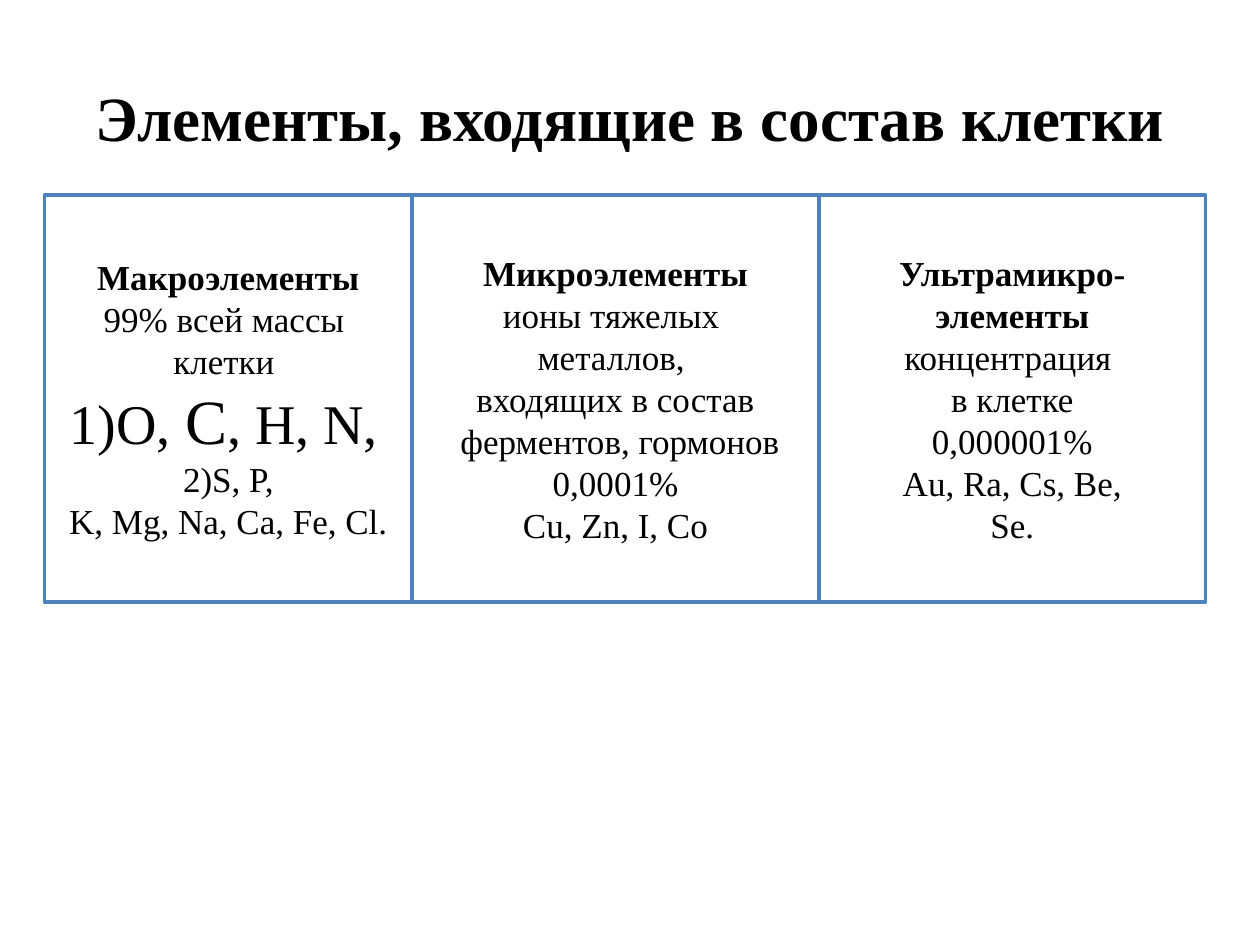
"""Build a slide on the chemical elements that make up a cell."""
from dataclasses import dataclass

from pptx import Presentation
from pptx import util as u
from pptx.dml import color
from pptx.enum import shapes, text


@dataclass(frozen=True)
class Theme:
    font: str = "Times New Roman"
    ink: color.RGBColor = color.RGBColor(0, 0, 0)
    panel: color.RGBColor = color.RGBColor(255, 255, 255)
    border: color.RGBColor = color.RGBColor(0x4F, 0x81, 0xBD)
    title: int = 36
    formula: int = 32
    body: int = 20


THEME = Theme()
PANEL_LEFT, PANEL_TOP, PANEL_HEIGHT = 25.5, 111.5, 232.5

PANELS = [
    (210, ["Макроэлементы"], [
        "99% всей массы ",
        "клетки ",
        [("1)О, ", THEME.formula), ("С", THEME.title),
         (", H, N,", THEME.formula), (" ", THEME.body)],
        "2)S, P,",
        "K, Mg, Na, Ca, Fe, Cl.",
    ]),
    (232.5, ["Микроэлементы"], [
        "ионы тяжелых ",
        "металлов, ",
        "входящих в состав",
        " ферментов, гормонов",
        "0,0001%",
        "Cu, Zn, I, Co",
    ]),
    (221, ["Ультрамикро-", "элементы"], [
        "концентрация ",
        "в клетке",
        "0,000001%",
        "Au, Ra, Cs, Be,",
        "Se.",
    ]),
]


def add_run(paragraph, content, size=THEME.body, bold=False):
    run = paragraph.add_run()
    run.text = content
    run.font.name = THEME.font
    run.font.size = u.Pt(size)
    run.font.bold = bold
    run.font.color.rgb = THEME.ink


def write_lines(frame, lines, **style):
    """Write centred lines, each a string or a list of (text, size) pairs."""
    frame.vertical_anchor = text.MSO_ANCHOR.MIDDLE
    for index, line in enumerate(lines):
        paragraph = frame.add_paragraph() if index else frame.paragraphs[0]
        paragraph.alignment = text.PP_ALIGN.CENTER
        if isinstance(line, str):
            add_run(paragraph, line, **style)
        else:
            for content, size in line:
                add_run(paragraph, content, size=size)


def set_title(slide, content):
    title = slide.shapes.title
    title.left, title.top = u.Pt(36), u.Pt(21.6)
    title.width, title.height = u.Pt(648), u.Pt(90)
    write_lines(title.text_frame, [content], size=THEME.title, bold=True)


def add_panel(slide, left, width, headings, lines):
    shape = slide.shapes.add_shape(
        shapes.MSO_SHAPE.RECTANGLE,
        u.Pt(left), u.Pt(PANEL_TOP), u.Pt(width), u.Pt(PANEL_HEIGHT))
    shape.shadow.inherit = False
    shape.fill.solid()
    shape.fill.fore_color.rgb = THEME.panel
    shape.line.color.rgb = THEME.border
    shape.line.width = u.Pt(2)
    frame = shape.text_frame
    frame.word_wrap = False
    write_lines(frame, headings + lines)
    for paragraph in frame.paragraphs[:len(headings)]:
        paragraph.runs[0].font.bold = True


def main():
    presentation = Presentation()
    presentation.slide_width, presentation.slide_height = u.Pt(720), u.Pt(540)
    slide = presentation.slides.add_slide(presentation.slide_layouts[5])
    set_title(slide, "Элементы, входящие в состав клетки")
    left = PANEL_LEFT
    for width, headings, lines in PANELS:
        add_panel(slide, left, width, headings, lines)
        left += width
    presentation.save("out.pptx")


if __name__ == "__main__":
    main()
